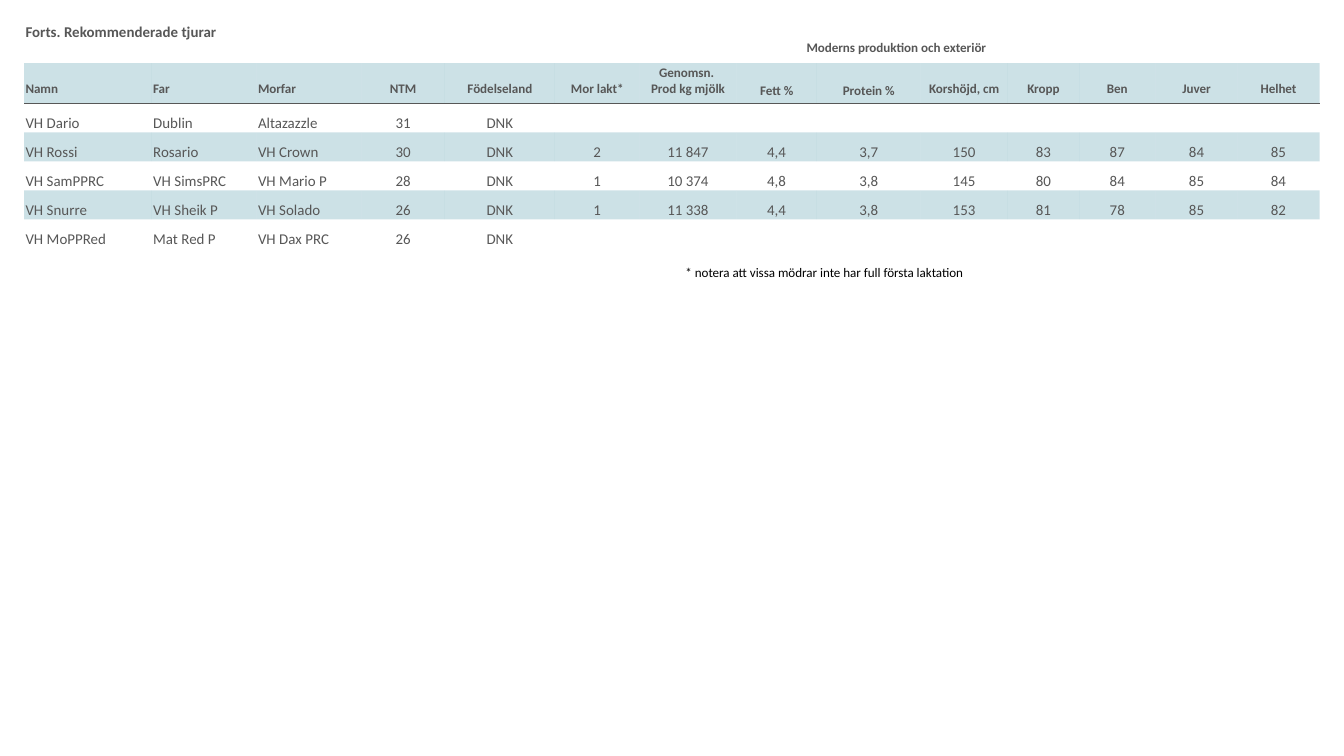
import lxml.etree
import pptx
import pptx.dml.color
import pptx.enum.text
import pptx.oxml.ns
import pptx.util
from pptx.util import Inches

GREY = pptx.dml.color.RGBColor(0x57, 0x57, 0x57)
BLACK = pptx.dml.color.RGBColor(0, 0, 0)
TEAL = pptx.dml.color.RGBColor(0x00, 0x6B, 0x85)
FONT = "Calibri"
NO_STYLE = "{2D5ABB26-0587-4C30-8999-92F81FD0307C}"
ALIGN = pptx.enum.text.PP_ALIGN
qn = pptx.oxml.ns.qn

COLUMN_WIDTHS = [0.95, 0.78, 0.78, 0.62, 0.82, 0.63, 0.72,
                 0.6, 0.77, 0.65, 0.53, 0.57, 0.61, 0.61]
TITLE_HEIGHT, HEADER_HEIGHT = 0.31, 0.3
LEFT_COLUMNS = 3
HEADERS = ["Namn", "Far", "Morfar", "NTM", "Födelseland", "Mor lakt*",
           "Genomsn. \vProd kg mjölk", "Fett %", "Protein %", "Korshöjd, cm",
           "Kropp", "Ben", "Juver", "Helhet"]
BULLS = [
    ["VH Dario", "Dublin", "Altazazzle", "31", "DNK"],
    ["VH Rossi", "Rosario", "VH Crown", "30", "DNK", "2", "11 847",
     "4,4", "3,7", "150", "83", "87", "84", "85"],
    ["VH SamPPRC", "VH SimsPRC", "VH Mario P", "28", "DNK", "1", "10 374",
     "4,8", "3,8", "145", "80", "84", "85", "84"],
    ["VH Snurre", "VH Sheik P", "VH Solado", "26", "DNK", "1", "11 338",
     "4,4", "3,8", "153", "81", "78", "85", "82"],
    ["VH MoPPRed", "Mat Red P", "VH Dax PRC", "26", "DNK"],
]


def add_plain_table(slide, box, widths, heights):
    """Add a table without style or banding at box (left, top, width, height)."""
    frame = slide.shapes.add_table(len(heights), len(widths),
                                   *[Inches(v) for v in box])
    table = frame.table
    table.first_row = table.horz_banding = False
    table._tbl.tblPr.find(qn("a:tableStyleId")).text = NO_STYLE
    for column, width in zip(table.columns, widths):
        column.width = Inches(width)
    for row, height in zip(table.rows, heights):
        row.height = Inches(height)
    return table


def write_cell(cell, text, size, bold=False, color=GREY, align=ALIGN.LEFT,
               bottom=0.0):
    cell.margin_left = cell.margin_right = cell.margin_top = Inches(0.01)
    cell.margin_bottom = Inches(bottom)
    cell.vertical_anchor = pptx.enum.text.MSO_ANCHOR.BOTTOM
    p = cell.text_frame.paragraphs[0]
    p.text = text
    p.alignment = align
    for r in p.runs:
        r.font.name = FONT
        r.font.size = pptx.util.Pt(size)
        r.font.bold = bold
        r.font.color.rgb = color
    if not text:  # keeps an empty cell from stretching its row
        lxml.etree.SubElement(p._p, qn("a:endParaRPr"), sz=str(size * 100))


def shade(cell):
    cell.fill.solid()
    cell.fill.fore_color.rgb = TEAL
    color = cell._tc.tcPr.find(qn("a:solidFill"))[0]
    lxml.etree.SubElement(color, qn("a:alpha"), val="20000")


def set_borders(cell, ruled=""):
    """Rule the sides named in ruled ("T" top, "B" bottom); clear the others."""
    tcPr = cell._tc.get_or_add_tcPr()
    for i, side in enumerate("LRTB"):
        ln = lxml.etree.Element(qn("a:ln" + side), w=str(pptx.util.Pt(1)))
        if side in ruled:
            fill = lxml.etree.SubElement(ln, qn("a:solidFill"))
            lxml.etree.SubElement(fill, qn("a:srgbClr"), val=str(GREY))
        else:
            lxml.etree.SubElement(ln, qn("a:noFill"))
        tcPr.insert(i, ln)


def column_align(column):
    return ALIGN.LEFT if column < LEFT_COLUMNS else ALIGN.CENTER


def fill_title_row(table):
    for column in range(len(COLUMN_WIDTHS)):
        write_cell(table.cell(0, column), "", 7)
        set_borders(table.cell(0, column))
    for first, last in ((0, 1), (3, 4), (5, 12)):
        table.cell(0, first).merge(table.cell(0, last))
    write_cell(table.cell(0, 0), "Forts. Rekommenderade tjurar", 8, True,
               bottom=0.16)
    write_cell(table.cell(0, 5), "Moderns produktion och exteriör", 7, True,
               align=ALIGN.CENTER, bottom=0.05)


def add_bull_table(slide, left, top, width, height):
    row_height = (height - TITLE_HEIGHT - HEADER_HEIGHT) / len(BULLS)
    heights = [TITLE_HEIGHT, HEADER_HEIGHT] + [row_height] * len(BULLS)
    table = add_plain_table(slide, (left, top, width, height),
                            COLUMN_WIDTHS, heights)
    fill_title_row(table)
    for column, header in enumerate(HEADERS):
        cell = table.cell(1, column)
        write_cell(cell, header, 7, True, align=column_align(column),
                   bottom=0.03 if "%" in header else 0.05)
        shade(cell)
        set_borders(cell, "B")
        for i, bull in enumerate(BULLS):
            cell = table.cell(i + 2, column)
            write_cell(cell, bull[column] if column < len(bull) else "", 8,
                       align=column_align(column))
            if i % 2:
                shade(cell)
            set_borders(cell, "" if i else "T")


def add_footnote(slide, left, top, width, height):
    table = add_plain_table(slide, (left, top, width, height),
                            [width], [height])
    write_cell(table.cell(0, 0),
               "* notera att vissa mödrar inte har full första laktation",
               7, color=BLACK, bottom=0.05)


def main():
    prs = pptx.Presentation()
    prs.slide_width = Inches(10)
    prs.slide_height = prs.slide_width * 9 // 16
    slide = prs.slides.add_slide(prs.slide_layouts[6])
    add_bull_table(slide, 0.18, 0.16, 9.65, 1.69)
    add_footnote(slide, 5.09, 1.94, 3.4, 0.2)
    prs.save("out.pptx")


if __name__ == "__main__":
    main()
